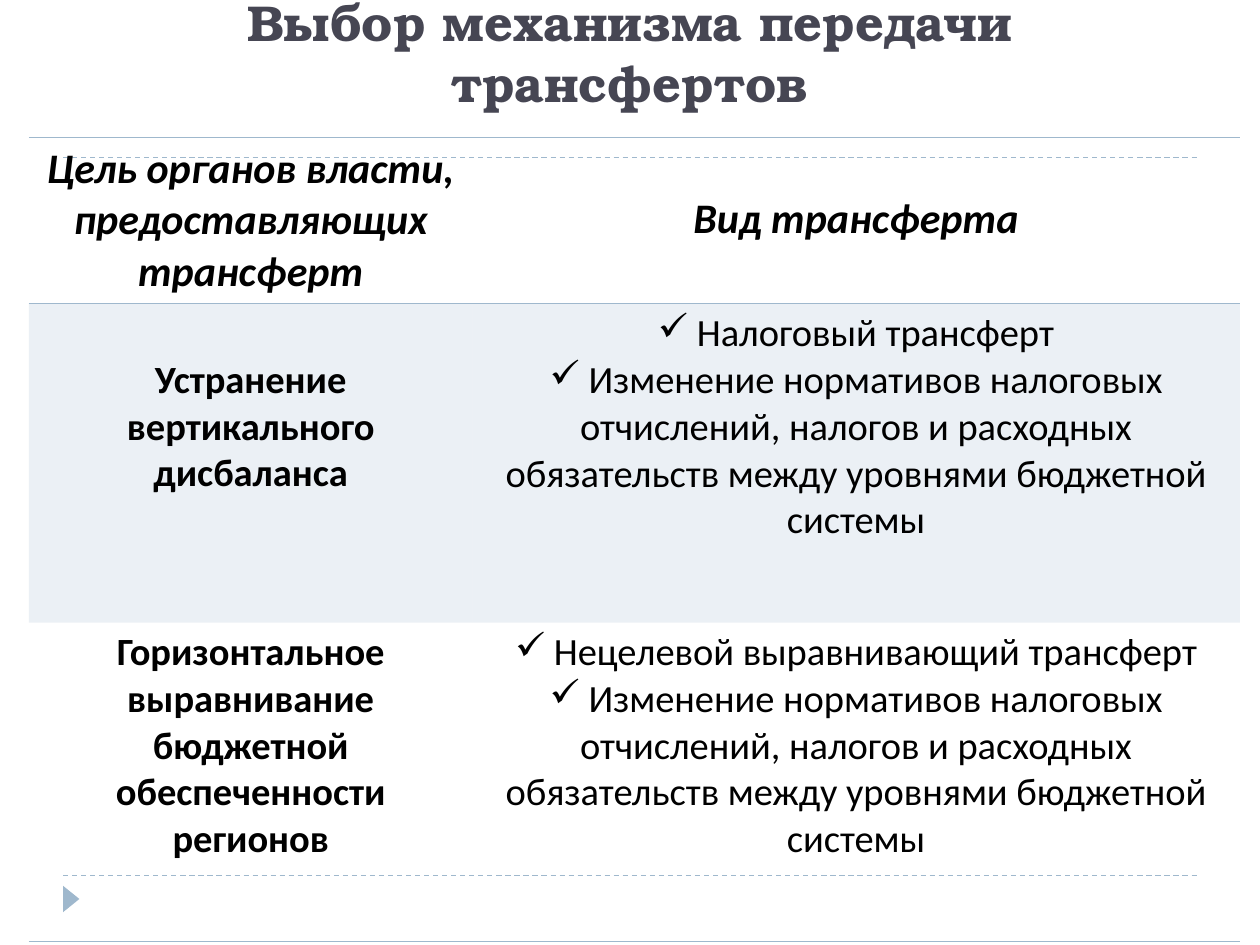
from lxml import etree
from pptx import Presentation
from pptx import util as u
from pptx.dml.color import RGBColor
from pptx.enum import dml, shapes, text
from pptx.oxml.ns import qn

BLUE = RGBColor(0x9F, 0xB8, 0xCD)
SLATE = RGBColor(0x46, 0x46, 0x53)
BLACK = RGBColor(0, 0, 0)
TITLE_FONT = "TeX Gyre Bonum"
BODY_FONT = "Calibri"


def format_text(paragraph, content, size=22, font=BODY_FONT, color=BLACK,
                bold=False, italic=False, bullet=None):
    paragraph.alignment = text.PP_ALIGN.CENTER
    run = paragraph.add_run()
    run.text = content
    run.font.size = u.Pt(size)
    run.font.name = font
    run.font.color.rgb = color
    run.font.bold = bold
    run.font.italic = italic
    if bullet:
        properties = paragraph._p.get_or_add_pPr()
        properties.set("marL", "0")
        properties.set("indent", "0")
        etree.SubElement(properties, qn("a:buChar"), char=bullet)


class SlideBuilder:
    def __init__(self, slide):
        self.slide = slide

    def title(self, content, left, top, width, height):
        shape = self.slide.shapes.title
        shape.left, shape.top = u.Inches(left), u.Inches(top)
        shape.width, shape.height = u.Inches(width), u.Inches(height)
        frame = shape.text_frame
        frame.word_wrap = True
        frame.auto_size = text.MSO_AUTO_SIZE.NONE
        frame.vertical_anchor = text.MSO_ANCHOR.BOTTOM
        format_text(frame.paragraphs[0], content, size=28.8, font=TITLE_FONT,
                    color=SLATE, bold=True)

    def dashed_line(self, left, right, y):
        line = self.slide.shapes.add_connector(
            shapes.MSO_CONNECTOR.STRAIGHT,
            u.Inches(left), u.Inches(y), u.Inches(right), u.Inches(y))
        line.line.color.rgb = BLUE
        line.line.width = u.Pt(0.75)
        line.line.dash_style = dml.MSO_LINE.DASH
        etree.SubElement(line._element.spPr, qn("a:effectLst"))

    def triangle(self, left, top, width, height, rotation):
        shape = self.slide.shapes.add_shape(
            shapes.MSO_SHAPE.ISOSCELES_TRIANGLE,
            u.Inches(left), u.Inches(top), u.Inches(width), u.Inches(height))
        shape.rotation = rotation
        shape.shadow.inherit = False
        shape.fill.solid()
        shape.fill.fore_color.rgb = BLUE
        shape.line.fill.background()

    def table(self, left, top, columns, rows):
        frame = self.slide.shapes.add_table(
            len(rows), len(columns), u.Inches(left), u.Inches(top),
            u.Inches(sum(columns)), u.Inches(sum(rows)))
        table = frame.table
        table.first_row = table.horz_banding = False
        for column, width in zip(table.columns, columns):
            column.width = u.Inches(width)
        for row, height in zip(table.rows, rows):
            row.height = u.Inches(height)
        return table

    def cell(self, cell, paragraphs, ruled="", shade=None, margin_top=0.05, **style):
        cell.margin_top = u.Inches(margin_top)
        for index, content in enumerate(paragraphs):
            frame = cell.text_frame
            paragraph = frame.add_paragraph() if index else frame.paragraphs[0]
            format_text(paragraph, content, **style)
        # Borders come before the fill in the cell properties
        properties = cell._tc.get_or_add_tcPr()
        for side in "LRTB":
            border = etree.SubElement(properties, qn("a:ln" + side), w=str(u.Pt(1)))
            if side in ruled:
                fill = etree.SubElement(border, qn("a:solidFill"))
                etree.SubElement(fill, qn("a:srgbClr"), val=str(BLUE))
            else:
                etree.SubElement(border, qn("a:noFill"))
        if shade is None:
            cell.fill.background()
        else:
            cell.fill.solid()
            cell.fill.fore_color.rgb = BLUE
            color = properties.find(qn("a:solidFill")).find(qn("a:srgbClr"))
            etree.SubElement(color, qn("a:alpha"), val=str(shade * 1000))


def main():
    presentation = Presentation()
    presentation.slide_width, presentation.slide_height = u.Inches(10), u.Inches(7.5)
    builder = SlideBuilder(presentation.slides.add_slide(presentation.slide_layouts[5]))

    # Frame decoration
    for y in (6.95, 1.25):
        builder.dashed_line(0.5, 9.5, y)
    builder.triangle(0.46, 7.07, 0.21, 0.13, rotation=90)

    builder.title("Выбор механизма передачи трансфертов", 0.5, 0.17, 9, 0.77)

    # Table header
    table = builder.table(0.23, 1.09, columns=[3.52, 6.09], rows=[1.32, 2.53, 2.53])
    header = dict(ruled="TB", size=24, bold=True, italic=True)
    builder.cell(table.cell(0, 0), ["Цель органов власти, предоставляющих трансферт"],
                 **header)
    builder.cell(table.cell(0, 1), ["Вид трансферта"], margin_top=0.45, **header)

    # Goals and the transfers that serve them
    norms = (" Изменение нормативов налоговых отчислений, налогов и расходных "
             "обязательств между уровнями бюджетной системы")
    goals = [
        ("Устранение вертикального дисбаланса", " Налоговый трансферт",
         dict(ruled="T", shade=20), 0.42),
        ("Горизонтальное выравнивание бюджетной обеспеченности регионов",
         " Нецелевой выравнивающий трансферт", dict(ruled="B"), 0.05),
    ]
    for row, (goal, transfer, look, margin_top) in enumerate(goals, start=1):
        builder.cell(table.cell(row, 0), [goal], bold=True, margin_top=margin_top, **look)
        builder.cell(table.cell(row, 1), [transfer, norms], bullet="✓", **look)

    presentation.save("out.pptx")


if __name__ == "__main__":
    main()
